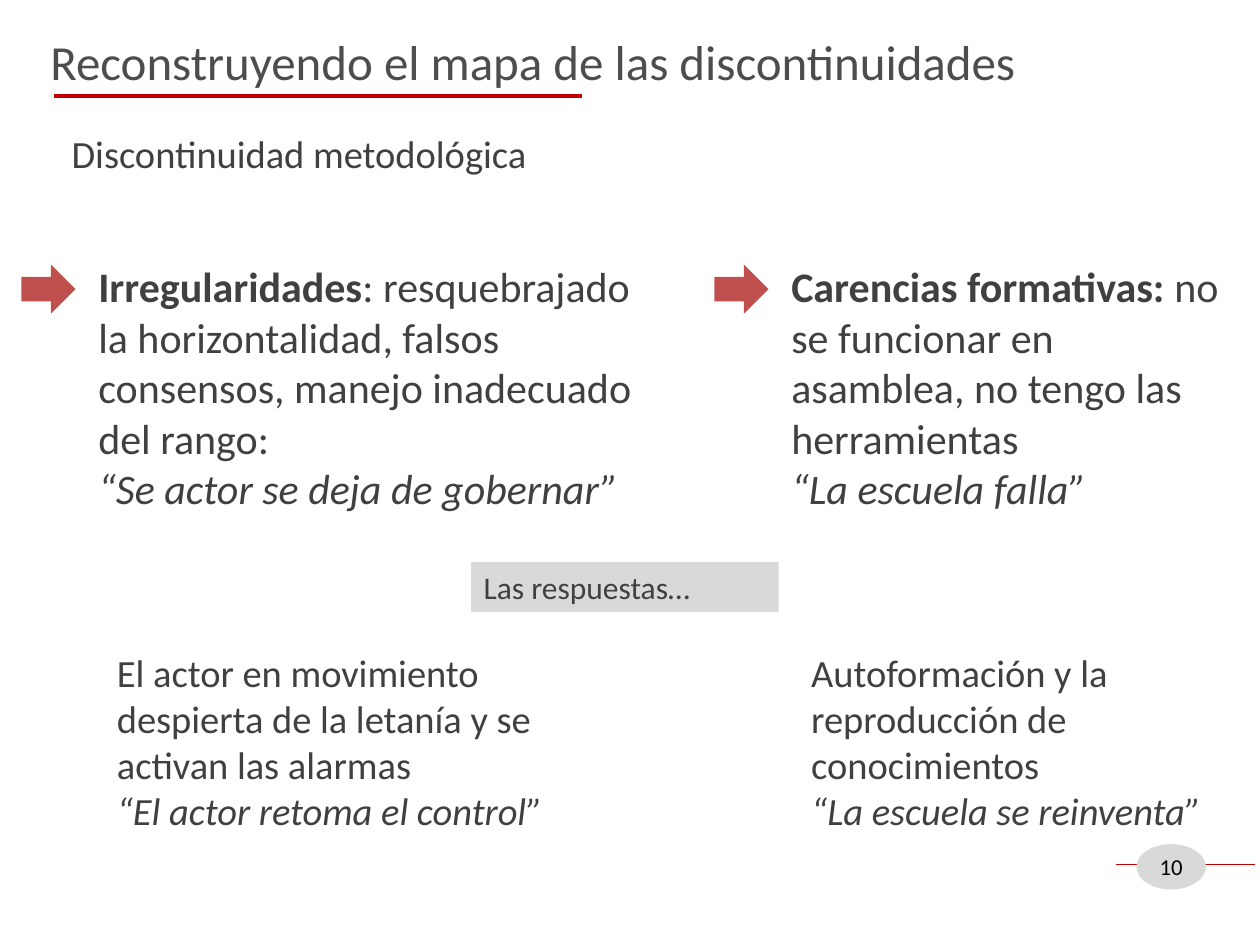
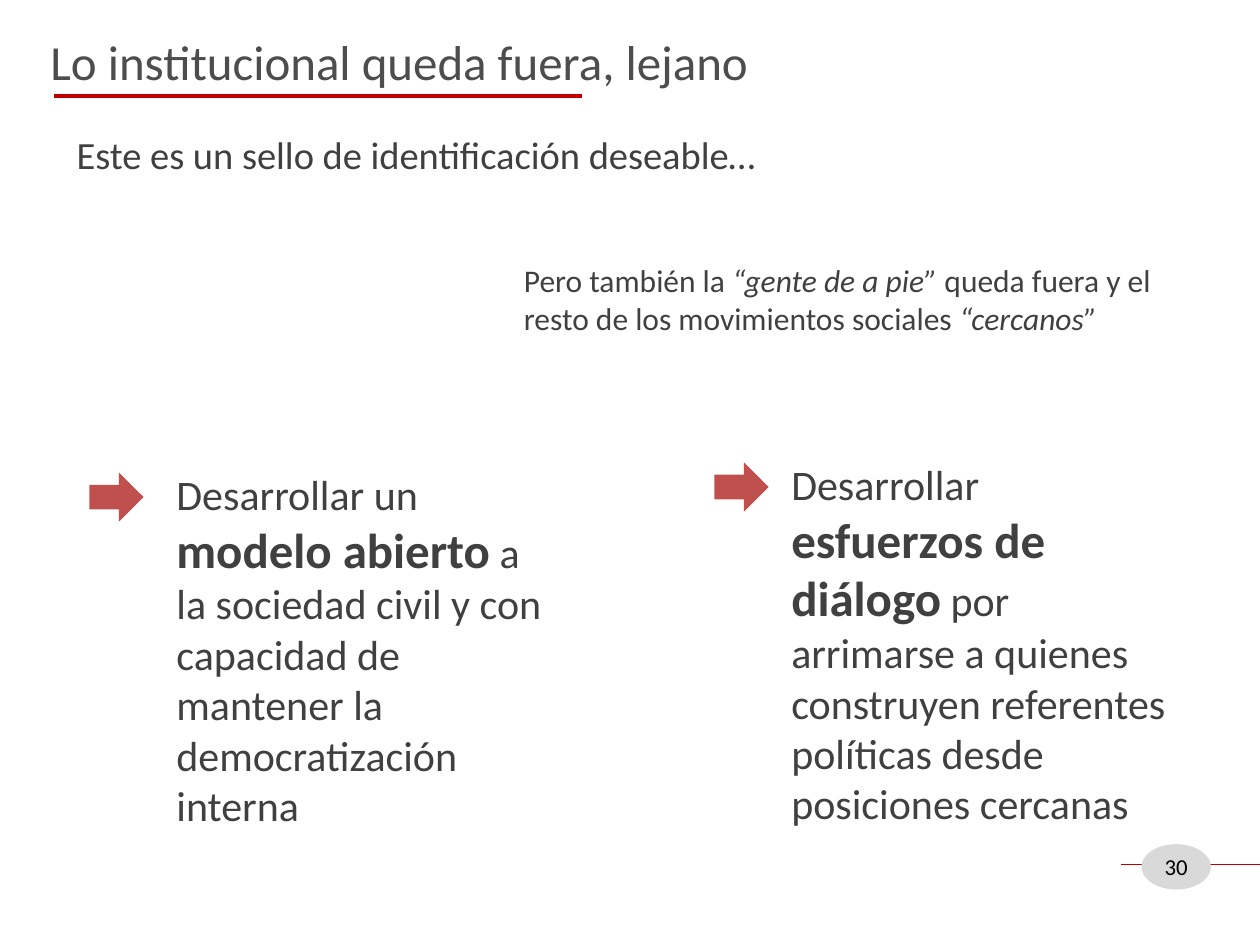
from dataclasses import dataclass

from lxml import etree
from pptx import Presentation
from pptx.dml.color import RGBColor
from pptx.enum.shapes import MSO_CONNECTOR, MSO_SHAPE
from pptx.enum.text import MSO_ANCHOR, MSO_AUTO_SIZE, PP_ALIGN
from pptx.oxml.ns import qn
from pptx.util import Inches, Pt

STRAIGHT = MSO_CONNECTOR.STRAIGHT
RECT, OVAL, ARROW = MSO_SHAPE.RECTANGLE, MSO_SHAPE.OVAL, MSO_SHAPE.RIGHT_ARROW
TOP, MIDDLE = MSO_ANCHOR.TOP, MSO_ANCHOR.MIDDLE
LEFT, CENTER = PP_ALIGN.LEFT, PP_ALIGN.CENTER
NO_FIT = MSO_AUTO_SIZE.NONE

WIDTH, HEIGHT = Inches(10), Inches(7.5)
COLUMNS, ROWS = 100, 75
TWO_CONTENT = 3
FONT = "Calibri"
INK, TITLE_INK, BLACK = "404040", "4D4D4D", "000000"
RED, ARROW_RED, GREY = "C00000", "C0504D", "D9D9D9"


@dataclass
class Box:
    col: float
    row: float
    cols: float
    rows: float


@dataclass
class Run:
    text: str
    bold: bool = False
    italic: bool = False
    size: float | None = None


@dataclass
class Note:
    box: Box
    paragraphs: list[list[Run]]
    size: float = 22
    fill: str | None = None


@dataclass
class Point:
    arrow_col: float
    box: Box
    paragraphs: list[list[Run]]


@dataclass
class Page:
    title: str
    number: int
    number_col: float
    notes: list[Note]
    points: list[Point]


def x(cols: float) -> int:
    return round(WIDTH * cols / COLUMNS)


def y(rows: float) -> int:
    return round(HEIGHT * rows / ROWS)


def place(box: Box) -> tuple[int, int, int, int]:
    return x(box.col), y(box.row), x(box.cols), y(box.rows)


def rgb(value: str) -> RGBColor:
    return RGBColor.from_string(value)


def write(sp, paragraphs: list[list[Run]], size: float, color: str = INK,
          align=LEFT, anchor=TOP) -> None:
    tf = sp.text_frame
    tf.word_wrap = True
    tf.auto_size = NO_FIT
    tf.vertical_anchor = anchor
    for i, runs in enumerate(paragraphs):
        p = tf.add_paragraph() if i else tf.paragraphs[0]
        p.alignment = align
        p.space_before = Pt(0)
        p.font.name = FONT
        p.font.size = Pt(size)
        p.font.color.rgb = rgb(color)
        for run in runs:
            r = p.add_run()
            r.text = run.text
            if run.bold:
                r.font.bold = True
            if run.italic:
                r.font.italic = True
            if run.size:
                r.font.size = Pt(run.size)


def fill_placeholder(sp, box: Box, paragraphs: list[list[Run]], size: float,
                     color: str = INK) -> None:
    sp.left, sp.top, sp.width, sp.height = place(box)
    write(sp, paragraphs, size, color)
    for p in sp.text_frame.paragraphs:
        pPr = p._p.get_or_add_pPr()
        pPr.set("marL", "0")
        pPr.set("indent", "0")
        bullet = etree.Element(qn("a:buNone"))
        pPr.find(qn("a:defRPr")).addprevious(bullet)


def add_shape(s, kind, box: Box, fill: str):
    sp = s.shapes.add_shape(kind, *place(box))
    sp.shadow.inherit = False
    sp.fill.solid()
    sp.fill.fore_color.rgb = rgb(fill)
    sp.line.fill.background()
    return sp


def add_rule(s, col: float, row: float, cols: float, weight: float) -> None:
    line = s.shapes.add_connector(STRAIGHT, x(col), y(row), x(col + cols), y(row))
    line.line.color.rgb = rgb(RED)
    line.line.width = Pt(weight)
    etree.SubElement(line._element.spPr, qn("a:effectLst"))


def add_note(s, note: Note) -> None:
    if note.fill:
        sp = add_shape(s, RECT, note.box, note.fill)
    else:
        sp = s.shapes.add_textbox(*place(note.box))
    write(sp, note.paragraphs, note.size)


def add_page_number(s, number: int, col: float) -> None:
    add_rule(s, col, 68.6, 11, 0.75)
    sp = add_shape(s, OVAL, Box(col + 1.6, 67, 5.5, 3.6), GREY)
    tf = sp.text_frame
    tf.margin_left = tf.margin_right = tf.margin_top = tf.margin_bottom = 0
    write(sp, [[Run(str(number))]], 13, BLACK, CENTER, MIDDLE)


def add_page(prs, page: Page) -> None:
    s = prs.slides.add_slide(prs.slide_layouts[TWO_CONTENT])
    title, *bodies = list(s.placeholders)[:3]
    fill_placeholder(title, Box(3, 2, 84.8, 5.7), [[Run(page.title)]], 28, TITLE_INK)
    add_rule(s, 4.3, 7.6, 41.9, 2.5)
    for note in page.notes:
        add_note(s, note)
    for body, point in zip(bodies, page.points):
        fill_placeholder(body, point.box, point.paragraphs, 24)
        add_shape(s, ARROW, Box(point.arrow_col, point.box.row + 0.8, 4.3, 3.9), ARROW_RED)
    add_page_number(s, page.number, page.number_col)


PAGES = [
    Page(
        "Reconstruyendo el mapa de las discontinuidades", 10, 88.6,
        [
            Note(Box(4.7, 9.8, 66.5, 4.7), [[Run("Discontinuidad metodológica")]]),
            Note(Box(8.3, 51, 37, 15.8), [
                [Run("El actor en movimiento despierta de la letanía y se activan las alarmas")],
                [Run("“El actor retoma el control”", italic=True)],
            ]),
            Note(Box(63.4, 51, 34.7, 15.8), [
                [Run("Autoformación y la reproducción de conocimientos")],
                [Run("“La escuela se reinventa”", italic=True)],
            ]),
            Note(Box(37.4, 44.6, 24.4, 4), [[Run("Las respuestas…")]], 18, GREY),
        ],
        [
            Point(1.7, Box(6.8, 20.2, 44.7, 21.2), [
                [Run("Irregularidades", bold=True),
                 Run(": resquebrajado la horizontalidad, falsos consensos, "
                     "manejo inadecuado del rango:")],
                [Run("“Se actor se deja de gobernar”", italic=True)],
            ]),
            Point(56.7, Box(61.8, 20.2, 36.3, 21.2), [
                [Run("Carencias formativas: ", bold=True),
                 Run("no se funcionar en asamblea, no tengo las herramientas")],
                [Run("“La escuela falla”", italic=True)],
            ]),
        ],
    ),
    Page(
        "Lo institucional queda fuera, lejano", 30, 89,
        [
            Note(Box(40.6, 20.2, 56.7, 7.1), [
                [Run("Pero también la "),
                 Run("“gente de a pie”", italic=True),
                 Run(" queda fuera y el resto de los movimientos sociales "),
                 Run("“cercanos”", italic=True)],
            ], 18),
            Note(Box(5.1, 9.9, 59.8, 4.7),
                 [[Run("Este es un sello de identificación deseable…")]]),
        ],
        [
            Point(7.1, Box(13, 36.7, 32.3, 30), [
                [Run("Desarrollar un "),
                 Run("modelo abierto", bold=True, size=28),
                 Run(" a la sociedad civil y con capacidad de mantener "
                     "la democratización interna")],
            ]),
            Point(56.7, Box(61.8, 35.9, 32.3, 30.6), [
                [Run("Desarrollar "),
                 Run("esfuerzos de diálogo", bold=True, size=28),
                 Run(" por arrimarse a quienes construyen referentes "
                     "políticas desde posiciones cercanas")],
            ]),
        ],
    ),
]


def main() -> None:
    prs = Presentation()
    prs.slide_width, prs.slide_height = WIDTH, HEIGHT
    for page in PAGES:
        add_page(prs, page)
    prs.save("out.pptx")


if __name__ == "__main__":
    main()
